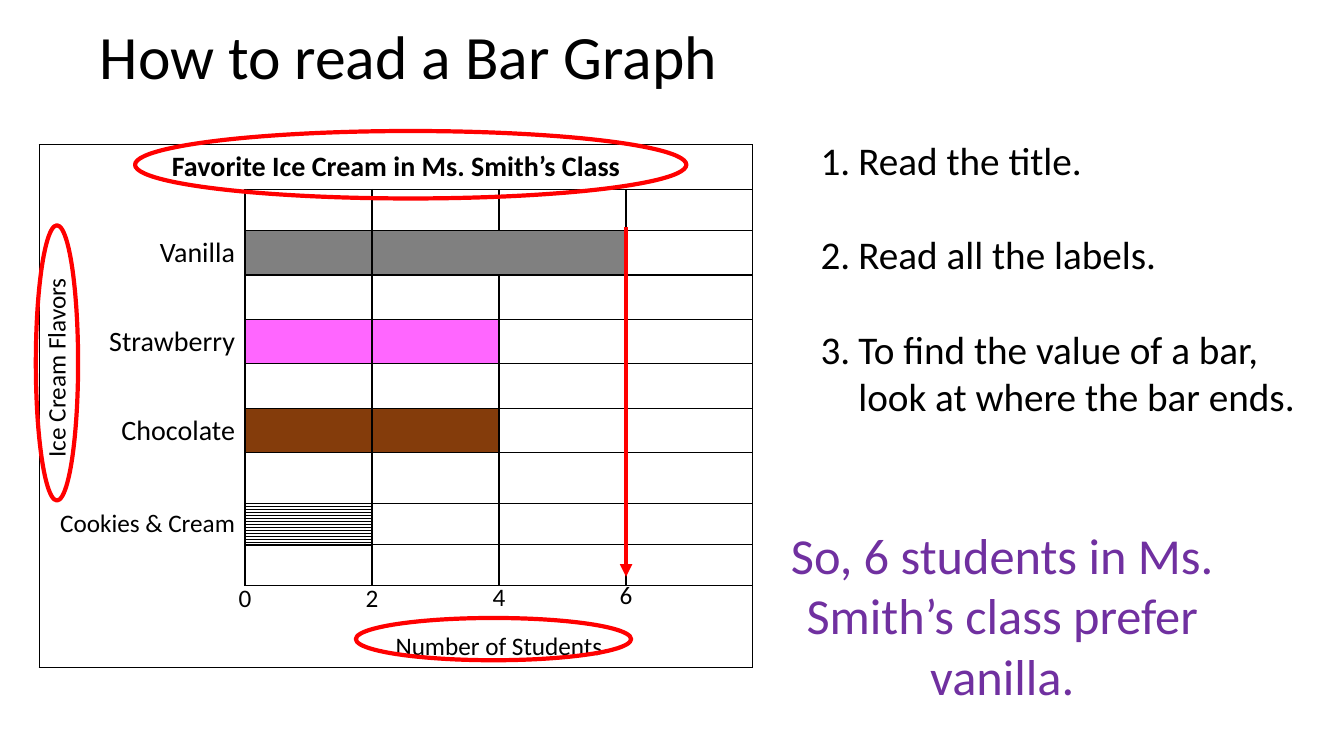
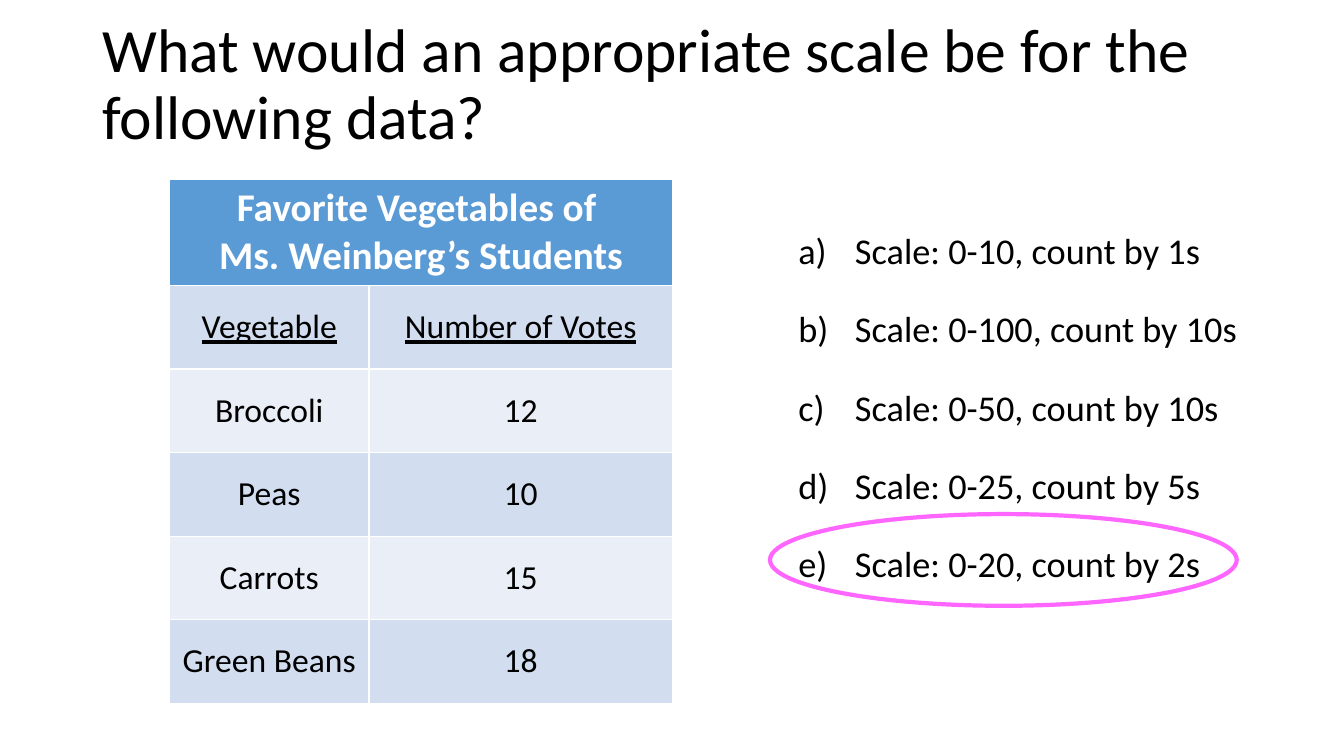
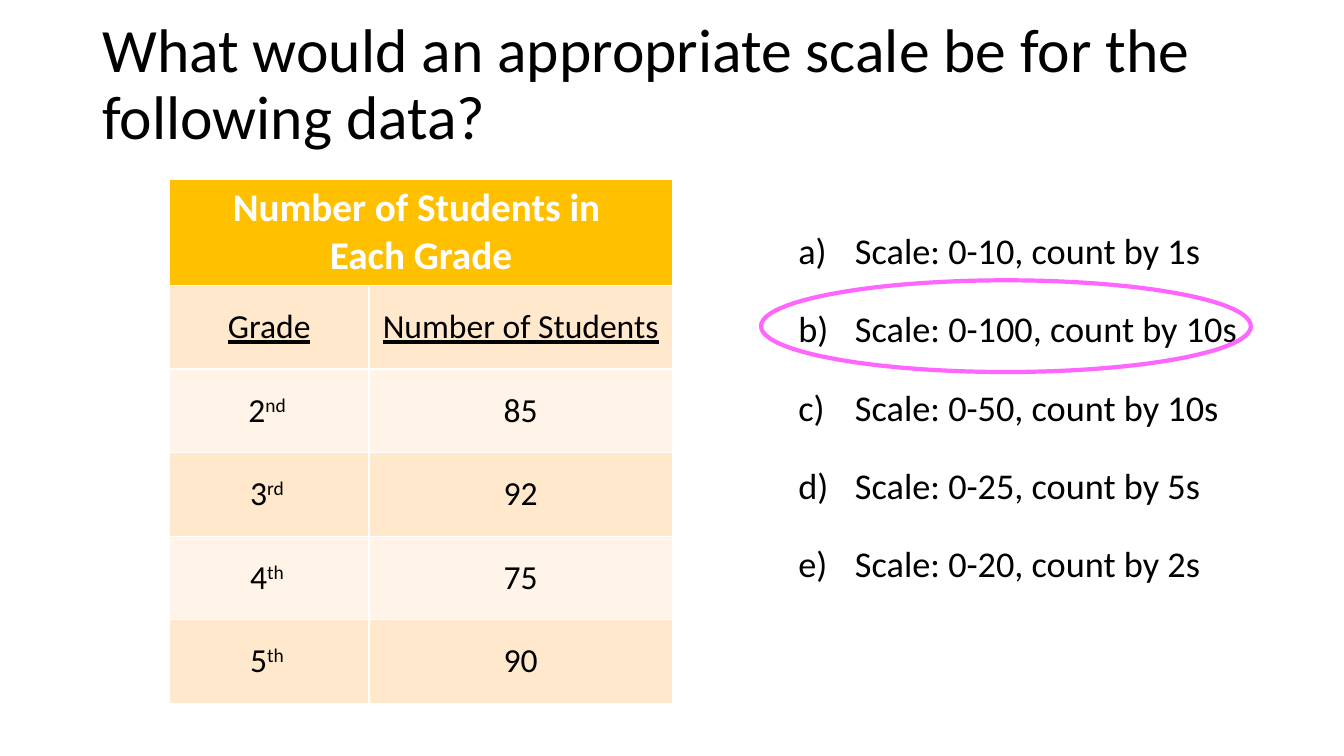
"""Build three slides on reading bar graphs and choosing a scale."""
from lxml.etree import SubElement
from pptx import Presentation
from pptx.dml.color import RGBColor
from pptx.enum.dml import MSO_PATTERN
from pptx.enum.shapes import MSO_CONNECTOR, MSO_SHAPE
from pptx.enum.text import MSO_ANCHOR, MSO_AUTO_SIZE, PP_ALIGN
from pptx.oxml.ns import qn
from pptx.util import Pt

BLACK = RGBColor(0x00, 0x00, 0x00)
WHITE = RGBColor(0xFF, 0xFF, 0xFF)
RED = RGBColor(0xFF, 0x00, 0x00)
PINK = RGBColor(0xFF, 0x66, 0xFF)
PURPLE = RGBColor(0x70, 0x30, 0xA0)
GRAY = RGBColor(0x80, 0x80, 0x80)
BROWN = RGBColor(0x84, 0x3C, 0x0B)
BLUES = [RGBColor(0x5B, 0x9B, 0xD5), RGBColor(0xD2, 0xDE, 0xEF), RGBColor(0xEA, 0xEF, 0xF7)]
GOLDS = [RGBColor(0xFF, 0xC0, 0x00), RGBColor(0xFF, 0xE8, 0xCC), RGBColor(0xFF, 0xF4, 0xE7)]
FONT = "Calibri"
PLAIN_TABLE = "{2D5ABB26-0587-4C30-8999-92F81FD0307C}"

GRAPH_TITLE = "Favorite Ice Cream in Ms. Smith’s Class"
GRAPH_LEFT, GRAPH_TOP = 28.1, 103.4
LABEL_WIDTH, UNIT_WIDTH = 147, 90.7
GRAPH_ROWS = [32, 29.3] + [31.75] * 5 + [36.4] + [29.3] * 4
LAST_ROW, LAST_COLUMN = 11, 4
PLOT_ROWS = range(1, 10)
BARS = {
    2: ("Vanilla", 20, 3, GRAY),
    4: ("Strawberry", 20, 2, PINK),
    6: ("Chocolate", 20, 2, BROWN),
    8: ("Cookies & Cream", 18, 1, None),
}
MERGED_STARTS = [(0, 0), (LAST_ROW, 1)]
TICKS = [("0", 412.5), ("2", 412.5), ("4", 412), ("6", 410.5)]
GRAPH_RINGS = [
    (96.5, 93.6, 393.8, 48.2, 0),
    (254.2, 441.4, 196.6, 30.2, 0),
    (-57.6, 244.1, 196.6, 30.2, 270),
]
STEPS = [
    "Read the title.",
    "Read all the labels.",
    "To find the value of a bar, look at where the bar ends.",
]
SCALES = [(10, 1), (100, 10), (50, 10), (25, 5), (20, 2)]
CHOICES = [f"Scale: 0-{top}, count by {step}s" for top, step in SCALES]
QUESTIONS = [
    {
        "heading": "Favorite Vegetables of \vMs. Weinberg’s Students",
        "rows": [("Vegetable", "Number of Votes"), ("Broccoli", "12"), ("Peas", "10"),
                 ("Carrots", "15"), ("Green Beans", "18")],
        "colors": BLUES,
        "ring": (550, 367.2, 333.4, 65.5),
    },
    {
        "heading": "Number of Students in \vEach Grade",
        "rows": [("Grade", "Number of Students"), ("2^nd ", "85"), ("3^rd ", "92"),
                 ("4^th ", "75"), ("5^th ", "90")],
        "colors": GOLDS,
        "ring": (543.6, 200.2, 349.9, 65.5),
    },
]


def write(paragraph, text, size, color=BLACK, align=PP_ALIGN.LEFT, **extra):
    """Fill a paragraph; a caret starts superscript text."""
    paragraph.text = text.split("^")[0]
    paragraph.alignment = align
    for raised in text.split("^")[1:]:
        run = paragraph.add_run()
        run.text = raised
        run._r.get_or_add_rPr().set("baseline", "30000")
    for run in paragraph.runs:
        run.font.color.rgb = color
        for name, value in {"name": FONT, "size": Pt(size), "bold": False, **extra}.items():
            setattr(run.font, name, value)


def place(shape, left, top, width, height):
    """Move and size a shape, in points."""
    for name, value in zip(("left", "top", "width", "height"), (left, top, width, height)):
        setattr(shape, name, Pt(value))


def add_slide(presentation, title, box):
    """Add a slide with the shared title style."""
    slide = presentation.slides.add_slide(presentation.slide_layouts[1])
    shape = slide.shapes.title
    place(shape, *box)
    frame = shape.text_frame
    frame.auto_size = MSO_AUTO_SIZE.NONE
    frame.vertical_anchor = MSO_ANCHOR.MIDDLE
    write(frame.paragraphs[0], title, 44)
    frame.paragraphs[0].line_spacing = 0.9
    return slide


def fill_list(slide, box, items, size, numbering, indent, spacing, gap, first_gap):
    """Put a numbered list in the body placeholder."""
    body = slide.placeholders[1]
    place(body, *box)
    frame = body.text_frame
    frame.auto_size = MSO_AUTO_SIZE.NONE
    for index, item in enumerate(items):
        paragraph = frame.add_paragraph() if index else frame.paragraphs[0]
        write(paragraph, item, size)
        paragraph.line_spacing = spacing
        paragraph.space_before = Pt(gap if index else first_gap)
        properties = paragraph._p.get_or_add_pPr()
        properties.set("marL", str(int(Pt(indent))))
        properties.set("indent", str(-int(Pt(indent))))
        SubElement(properties, qn("a:buFont"), typeface="+mj-lt")
        SubElement(properties, qn("a:buAutoNum"), type=numbering)


def add_label(slide, box, text, size, rotation=0, **style):
    """Add a wrapped text box."""
    label = slide.shapes.add_textbox(*map(Pt, box))
    label.rotation = rotation
    label.text_frame.word_wrap = True
    write(label.text_frame.paragraphs[0], text, size, **style)


def add_ring(slide, box, color, rotation=0):
    """Add an unfilled ellipse that marks an item."""
    ring = slide.shapes.add_shape(MSO_SHAPE.OVAL, *map(Pt, box))
    ring.rotation = rotation
    ring.shadow.inherit = False
    ring.fill.background()
    ring.line.color.rgb = color
    ring.line.width = Pt(3)


def add_table(slide, left, top, widths, heights):
    """Add a table with the given column widths and row heights."""
    table = slide.shapes.add_table(
        len(heights), len(widths), Pt(left), Pt(top), Pt(sum(widths)), Pt(sum(heights))).table
    for column, width in zip(table.columns, widths):
        column.width = Pt(width)
    for row, height in zip(table.rows, heights):
        row.height = Pt(height)
    return table


def set_borders(cell, sides):
    """Draw black borders on the named sides, ahead of the cell's fill."""
    properties = cell._tc.get_or_add_tcPr()
    for position, side in enumerate(sides):
        line = SubElement(properties, qn(f"a:ln{side}"), w=str(int(Pt(1))))
        SubElement(SubElement(line, qn("a:solidFill")), qn("a:srgbClr"), val=str(BLACK))
        properties.insert(position, line)


def graph_sides(row, column):
    """Name the sides of a graph cell that carry a line."""
    plot = row in PLOT_ROWS and column > 0
    length = BARS[row][2] if row in BARS else 0
    edges = {
        "L": column == 0 or plot and not 1 < column <= length,
        "R": column == LAST_COLUMN or plot and column >= length or (row, column) in MERGED_STARTS,
        "T": row == 0 or plot,
        "B": row == LAST_ROW or plot,
    }
    return [side for side, drawn in edges.items() if drawn]


def add_bar_graph(slide):
    """Draw the bar graph as a table with filled cells."""
    table = add_table(slide, GRAPH_LEFT, GRAPH_TOP,
                      [LABEL_WIDTH] + [UNIT_WIDTH] * LAST_COLUMN, GRAPH_ROWS)
    table.first_row = table.horz_banding = False
    table._tbl.tblPr.find(qn("a:tableStyleId")).text = PLAIN_TABLE
    for row in range(len(GRAPH_ROWS)):
        for column in range(LAST_COLUMN + 1):
            set_borders(table.cell(row, column), graph_sides(row, column))
    for row, column in MERGED_STARTS:
        table.cell(row, column).merge(table.cell(row, LAST_COLUMN))
    write(table.cell(0, 0).text_frame.paragraphs[0], GRAPH_TITLE, 20,
          align=PP_ALIGN.CENTER, bold=True)
    write(table.cell(LAST_ROW, 1).text_frame.paragraphs[0], "Number of Students", 18,
          align=PP_ALIGN.CENTER)
    for row, (name, size, length, color) in BARS.items():
        write(table.cell(row, 0).text_frame.paragraphs[0], name, size, align=PP_ALIGN.RIGHT)
        for column in range(1, length + 1):
            fill = table.cell(row, column).fill
            if color is None:
                fill.patterned()
                fill.pattern = MSO_PATTERN.ZIG_ZAG
                fill.fore_color.rgb = BLACK
                fill.back_color.rgb = WHITE
            else:
                fill.solid()
                fill.fore_color.rgb = color


def add_arrow(slide, x, top, bottom):
    """Add the red arrow from the end of a bar down to the scale."""
    arrow = slide.shapes.add_connector(MSO_CONNECTOR.STRAIGHT, Pt(x), Pt(top), Pt(x), Pt(bottom))
    arrow.line.color.rgb = RED
    arrow.line.width = Pt(3)
    SubElement(arrow.line._get_or_add_ln(), qn("a:tailEnd"), type="triangle")
    SubElement(arrow._element.spPr, qn("a:effectLst"))


def build_graph_slide(presentation):
    """Build the slide on how to read a bar graph."""
    slide = add_slide(presentation, "How to read a Bar Graph", (64, 10, 828, 65))
    fill_list(slide, (578.9, 93.6, 365, 211), STEPS, 28, "arabicPeriod", 27, 1.0, 34, 0)
    add_bar_graph(slide)
    for index, (value, top) in enumerate(TICKS):
        add_label(slide, (163.4 + index * UNIT_WIDTH, top, 26, 29), value, 18)
    add_label(slide, (-34.6, 244.8, 149, 29), "Ice Cream Flavors", 18, 270)
    for *box, rotation in GRAPH_RINGS:
        add_ring(slide, box, RED, rotation)
    add_arrow(slide, GRAPH_LEFT + LABEL_WIDTH + 3 * UNIT_WIDTH, 162, 412)
    add_label(slide, (540, 370.8, 352, 138),
              "So, 6 students in Ms. Smith’s class prefer vanilla.", 36,
              color=PURPLE, align=PP_ALIGN.CENTER)


def build_question_slide(presentation, question):
    """Build a slide that asks for the scale of a data table."""
    slide = add_slide(presentation, "What would an appropriate scale be for the following data?",
                      (66, 9.4, 828, 104.4))
    fill_list(slide, (563, 144, 331, 343), CHOICES, 25.9, "alphaLcParenR", 40.5, 1.5, 9.25, 9.25)
    rows = question["rows"]
    header_color, *bands = question["colors"]
    table = add_table(slide, 121, 128.2, [142.6, 216.7], [75] + [59.7] * len(rows))
    heading = table.cell(0, 0)
    heading.merge(table.cell(0, 1))
    heading.fill.solid()
    heading.fill.fore_color.rgb = header_color
    write(heading.text_frame.paragraphs[0], question["heading"], 28, WHITE,
          PP_ALIGN.CENTER, bold=True)
    for index, row in enumerate(rows):
        for column, text in enumerate(row):
            cell = table.cell(index + 1, column)
            cell.vertical_anchor = MSO_ANCHOR.MIDDLE
            cell.fill.solid()
            cell.fill.fore_color.rgb = bands[index % 2]
            write(cell.text_frame.paragraphs[0], text, 24, align=PP_ALIGN.CENTER,
                  underline=index == 0)
    add_ring(slide, question["ring"], PINK)


def main():
    """Build and save the presentation."""
    presentation = Presentation()
    presentation.slide_width, presentation.slide_height = Pt(960), Pt(540)
    build_graph_slide(presentation)
    for question in QUESTIONS:
        build_question_slide(presentation, question)
    presentation.save("out.pptx")


if __name__ == "__main__":
    main()
